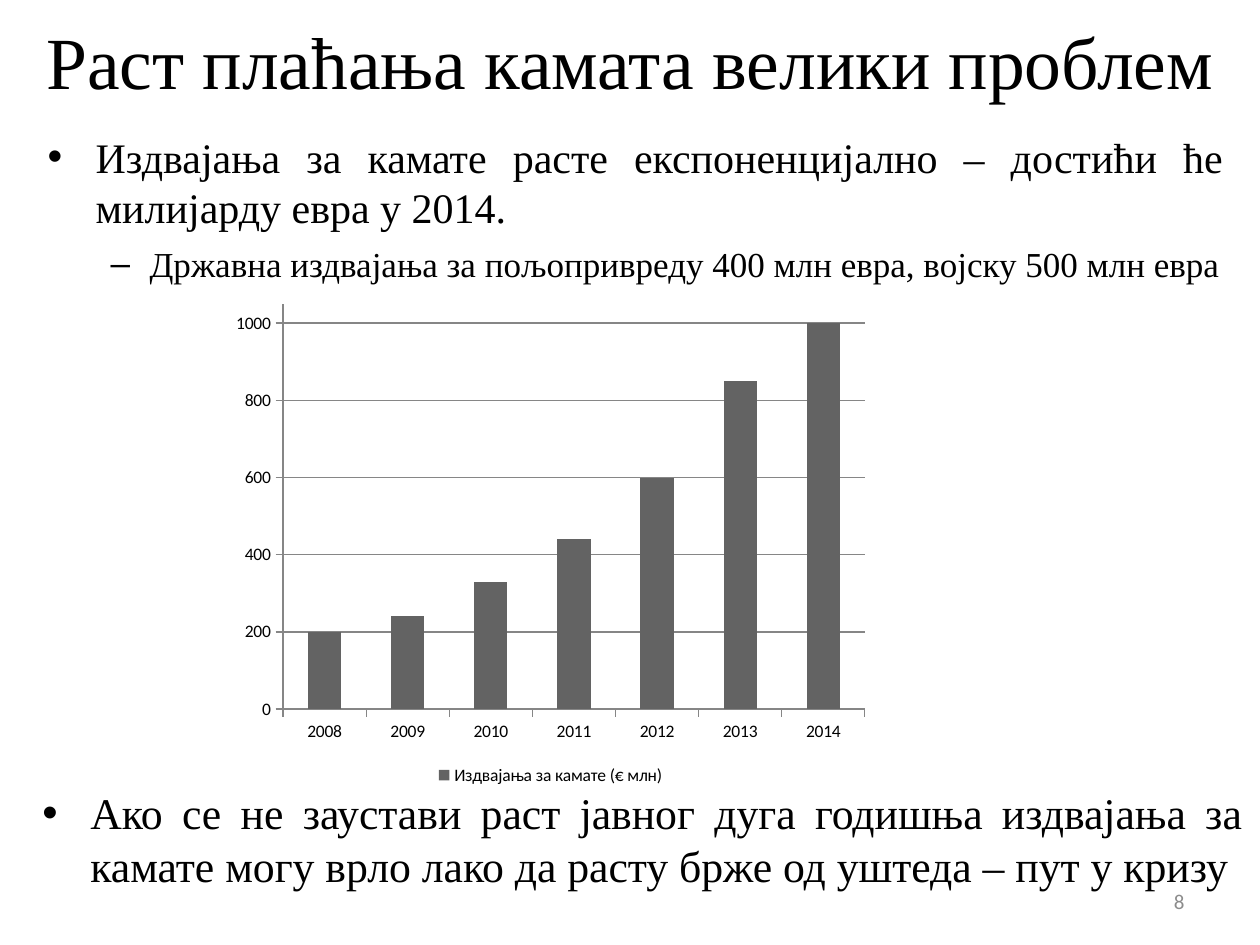
from lxml import etree
from pptx import Presentation
from pptx.chart.data import CategoryChartData
from pptx.dml.color import RGBColor
from pptx.enum.chart import XL_CHART_TYPE, XL_LEGEND_POSITION, XL_TICK_MARK
from pptx.enum.text import MSO_ANCHOR, MSO_AUTO_SIZE, PP_ALIGN
from pptx.oxml.ns import qn
from pptx.util import Emu, Pt

COLUMNS = XL_CHART_TYPE.COLUMN_CLUSTERED
BOTTOM = XL_LEGEND_POSITION.BOTTOM
OUTSIDE = XL_TICK_MARK.OUTSIDE
TOP, MIDDLE = MSO_ANCHOR.TOP, MSO_ANCHOR.MIDDLE
NO_AUTOFIT = MSO_AUTO_SIZE.NONE
CENTER, RIGHT, JUSTIFY = PP_ALIGN.CENTER, PP_ALIGN.RIGHT, PP_ALIGN.JUSTIFY

PX = 914400 / 126
SERIF, SANS = "Times New Roman", "Calibri"
BLACK, GRAY, BAR, AXIS = (
    RGBColor.from_string(color) for color in ("000000", "8C8C8C", "636363", "868686"))


def px(*lengths):
    """Turn pixel lengths into a list of EMU lengths."""
    return [Emu(round(length * PX)) for length in lengths]


presentation = Presentation()
presentation.slide_width, presentation.slide_height = px(1260, 945)
slide = presentation.slides.add_slide(presentation.slide_layouts[1])

title = slide.shapes.title
body = slide.placeholders[1]
page_number = slide.shapes.add_textbox(*px(903, 876, 294, 50))
conclusion = slide.shapes.add_textbox(*px(30, 780, 1225, 139))

# Each paragraph: text, size, font, colour, alignment, bullet (character, indent, hanging)
first_bullet, second_bullet = ("•", 48, 48), ("–", 102, 39)
text_blocks = [
    (title, (0, -4, 1260, 129), MIDDLE, [
        ("Раст плаћања камата велики проблем", 42, SERIF, BLACK, CENTER, None)]),
    (body, (35, 125, 1201, 179), TOP, [
        ("Издвајања за камате расте експоненцијално – достићи ће милијарду евра у 2014.",
         24, SERIF, BLACK, JUSTIFY, first_bullet),
        ("Државна издвајања за пољопривреду 400 млн евра, војску 500 млн евра",
         20, SERIF, BLACK, JUSTIFY, second_bullet)]),
    (page_number, (903, 876, 294, 50), MIDDLE, [
        ("8", 12, SANS, GRAY, RIGHT, None)]),
    (conclusion, (30, 780, 1225, 139), TOP, [
        ("Ако се не заустави раст јавног дуга годишња издвајања за камате "
         "могу врло лако да расту брже од уштеда – пут у кризу",
         25, SERIF, BLACK, JUSTIFY, first_bullet)]),
]

for shape, box, anchor, paragraphs in text_blocks:
    shape.left, shape.top, shape.width, shape.height = px(*box)
    frame = shape.text_frame
    frame.word_wrap = True
    frame.auto_size = NO_AUTOFIT
    frame.vertical_anchor = anchor
    for index, (text, size, font, color, alignment, bullet) in enumerate(paragraphs):
        paragraph = frame.add_paragraph() if index else frame.paragraphs[0]
        paragraph.alignment = alignment
        run = paragraph.add_run()
        run.text = text
        for name, value in {"size": Pt(size), "name": font}.items():
            setattr(run.font, name, value)
        run.font.color.rgb = color
        if bullet:
            character, indent, hanging = bullet
            paragraph.level = int(bullet == second_bullet)
            paragraph.space_before = paragraph.space_after = Pt(3)
            properties = paragraph._p.get_or_add_pPr()
            margin, first_line = px(indent, -hanging)
            properties.set("marL", str(margin))
            properties.set("indent", str(first_line))
            etree.SubElement(properties, qn("a:buFont")).set("typeface", "Arial")
            etree.SubElement(properties, qn("a:buChar")).set("char", character)

chart_data = CategoryChartData()
chart_data.categories = [str(year) for year in range(2008, 2015)]
chart_data.add_series("Издвајања за камате (€ млн)", [200, 240, 330, 440, 600, 850, 1000])
chart = slide.shapes.add_chart(COLUMNS, *px(223, 294, 655, 496), chart_data).chart
chart.has_title = False
for name, value in {"size": Pt(10), "name": SANS}.items():
    setattr(chart.font, name, value)
chart.font.color.rgb = BLACK
chart.has_legend = True
chart.legend.position = BOTTOM
chart.legend.include_in_layout = False

plot = chart.plots[0]
plot.gap_width = 150
plot.vary_by_categories = False
series_fill = plot.series[0].format.fill
series_fill.solid()
series_fill.fore_color.rgb = BAR

value_axis = chart.value_axis
value_format = {"minimum_scale": 0, "maximum_scale": 1050, "major_unit": 200,
                "has_major_gridlines": True}
for name, value in value_format.items():
    setattr(value_axis, name, value)
for axis in (chart.category_axis, value_axis):
    axis.major_tick_mark = OUTSIDE
for part in (chart.category_axis, value_axis, value_axis.major_gridlines):
    part.format.line.color.rgb = AXIS
    part.format.line.width = Pt(0.75)

presentation.save("out.pptx")
